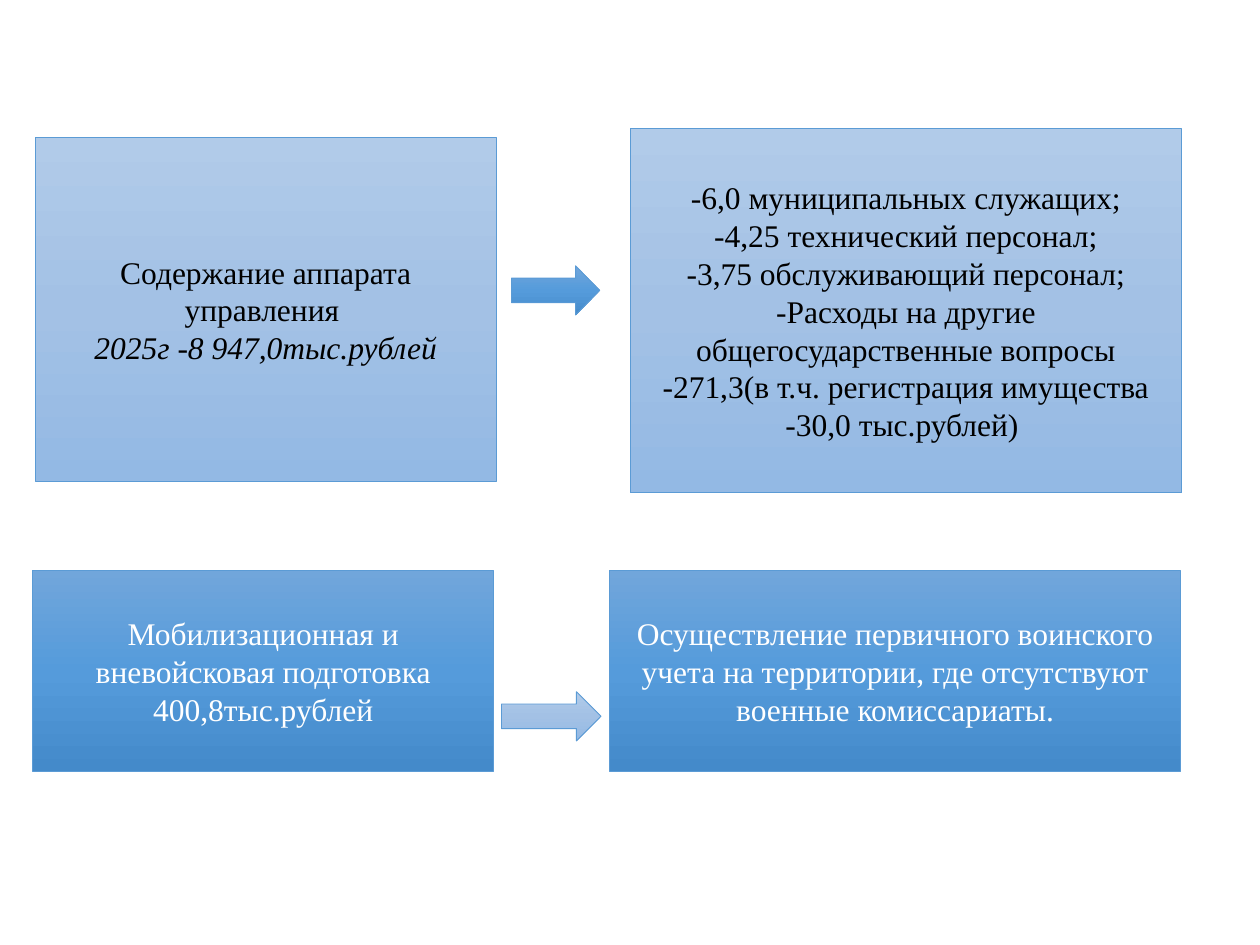
import copy
from dataclasses import dataclass

import pptx
import pptx.dml.color
import pptx.enum.shapes
import pptx.enum.text
import pptx.oxml.ns
import pptx.util

Inches = pptx.util.Inches
Kind = pptx.enum.shapes.MSO_SHAPE

COLORS = {"line": "5B9BD5", "black": "000000", "white": "FFFFFF"}
SHADES = {
    "light": ("B1CBE9", "A3C1E5", "93B9E4"),
    "deep": ("71A6DB", "559BDB", "448ACA"),
}
INKS = {"light": "black", "deep": "white"}


@dataclass
class Box:
    left: float
    top: float
    width: float
    height: float
    shade: str
    lines: tuple[str, ...]
    slanted: int = -1  # index of the italic line


@dataclass
class Arrow:
    left: float
    top: float
    width: float
    height: float
    shade: str
    head: float = 0.5


BOXES = [
    Box(0.28, 1.09, 3.66, 2.73, "light",
        ("Содержание аппарата управления ", "2025г -8 947,0тыс.рублей"), 1),
    Box(0.26, 4.53, 3.66, 1.59, "deep",
        ("Мобилизационная и вневойсковая подготовка", "400,8тыс.рублей")),
    Box(5, 1.02, 4.38, 2.89, "light",
        ("-6,0 муниципальных служащих;",
         "-4,25 технический персонал;",
         "-3,75 обслуживающий персонал;",
         "-Расходы на другие общегосударственные вопросы "
         "-271,3(в т.ч. регистрация имущества",
         "-30,0 тыс.рублей) ")),
    Box(4.84, 4.53, 4.53, 1.59, "deep",
        ("Осуществление первичного воинского учета на территории, "
         "где отсутствуют военные комиссариаты.",)),
]
ARROWS = [
    Arrow(4.06, 2.11, 0.7, 0.39, "deep", 0.49),
    Arrow(3.98, 5.49, 0.79, 0.39, "light"),
]


def color(code: str) -> pptx.dml.color.RGBColor:
    return pptx.dml.color.RGBColor.from_string(code)


def paint(shape, shade: str) -> None:
    """Fill from top to bottom with three evenly spaced stops."""
    fill = shape.fill
    fill.gradient()
    fill.gradient_angle = 270
    stops = next(shape.element.iter(pptx.oxml.ns.qn("a:gsLst")))
    stops.append(copy.deepcopy(stops[0]))
    for rank, (stop, code) in enumerate(zip(fill.gradient_stops, SHADES[shade])):
        stop.position = rank / 2
        stop.color.rgb = color(code)


def draw(slide, kind, part: Box | Arrow):
    spot = (part.left, part.top, part.width, part.height)
    shape = slide.shapes.add_shape(kind, *map(Inches, spot))
    shape.shadow.inherit = False
    paint(shape, part.shade)
    shape.line.color.rgb = color(COLORS["line"])
    shape.line.width = pptx.util.Pt(0.5)
    return shape


def write(para, text: str, *, ink: str, size: int = 18,
          face: str = "Times New Roman", italic: bool = False) -> None:
    para.alignment = pptx.enum.text.PP_ALIGN.CENTER
    run = para.add_run()
    run.text = text
    font = run.font
    font.name, font.size, font.italic = face, pptx.util.Pt(size), italic
    font.color.rgb = color(COLORS[ink])


def add_box(slide, box: Box) -> None:
    frame = draw(slide, Kind.RECTANGLE, box).text_frame
    frame.word_wrap = True
    frame.vertical_anchor = pptx.enum.text.MSO_ANCHOR.MIDDLE
    for rank, text in enumerate(box.lines):
        para = frame.add_paragraph() if rank else frame.paragraphs[0]
        write(para, text, ink=INKS[box.shade], italic=rank == box.slanted)


def add_arrow(slide, arrow: Arrow) -> None:
    shape = draw(slide, Kind.RIGHT_ARROW, arrow)
    shape.adjustments[1] = arrow.head


def main() -> None:
    deck = pptx.Presentation()
    deck.slide_width, deck.slide_height = Inches(10), Inches(7.5)
    slide = deck.slides.add_slide(deck.slide_layouts[6])

    # Budget items on the left, their details on the right
    for box in BOXES:
        add_box(slide, box)

    # Arrows from item to detail
    for arrow in ARROWS:
        add_arrow(slide, arrow)

    deck.save("out.pptx")


if __name__ == "__main__":
    main()
